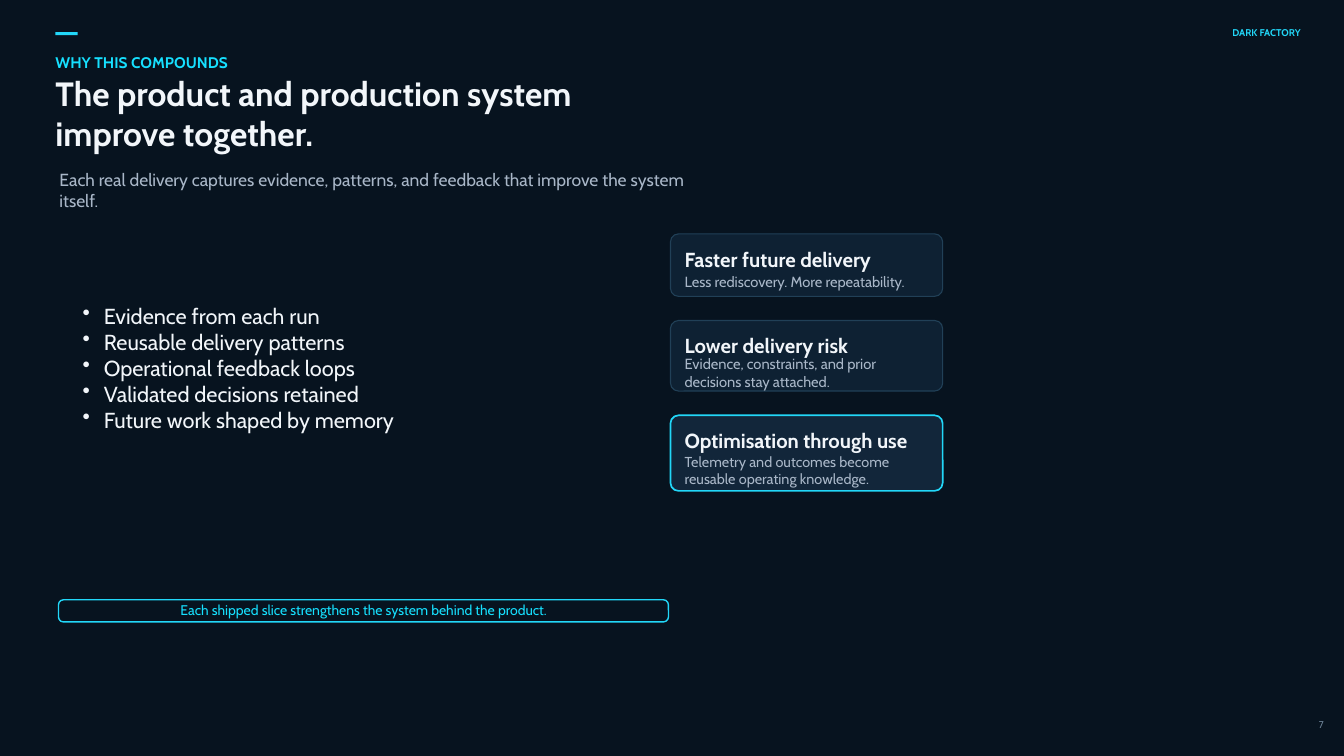
"""Builds the slide on how the product and its production system improve together."""
from lxml.etree import SubElement
from pptx import Presentation
from pptx.dml.color import RGBColor
from pptx.enum.shapes import MSO_SHAPE
from pptx.enum.text import MSO_ANCHOR, MSO_AUTO_SIZE, PP_ALIGN
from pptx.oxml.ns import qn
from pptx.util import Inches, Pt

BACKGROUND = "07131F"
ACCENT = "22D7F8"
BRIGHT = "16E0FF"
WHITE = "F2F6FA"
MUTED = "A9B7C8"
CARD = "0E2133"
CARD_EDGE = "214057"

color = RGBColor.from_string

deck = Presentation()
deck.slide_width = Inches(13.33)
deck.slide_height = Inches(7.5)
page = deck.slides.add_slide(deck.slide_layouts[6])
page.background.fill.solid()
page.background.fill.fore_color.rgb = color(BACKGROUND)


def add_text(text, left, top, width, height, size, ink, bold=False, align=PP_ALIGN.LEFT):
    box = page.shapes.add_textbox(Inches(left), Inches(top), Inches(width), Inches(height))
    frame = box.text_frame
    frame.text = text
    frame.word_wrap = True
    frame.auto_size = MSO_AUTO_SIZE.SHAPE_TO_FIT_TEXT
    frame.vertical_anchor = MSO_ANCHOR.MIDDLE
    frame.margin_left = frame.margin_right = frame.margin_top = frame.margin_bottom = 0
    for para in frame.paragraphs:
        para.alignment = align
        for span in para.runs:
            span.font.name = "Cabin"
            span.font.size = Pt(size)
            span.font.bold = bold
            span.font.color.rgb = color(ink)
    return frame


def add_panel(left, top, width, height, fill, edge=None, edge_width=0, radius=0):
    kind = MSO_SHAPE.ROUNDED_RECTANGLE if radius else MSO_SHAPE.RECTANGLE
    panel = page.shapes.add_shape(kind, Inches(left), Inches(top), Inches(width), Inches(height))
    panel.shadow.inherit = False
    panel.fill.solid()
    panel.fill.fore_color.rgb = color(fill)
    if radius:
        panel.adjustments[0] = radius / height
    if edge:
        panel.line.color.rgb = color(edge)
        panel.line.width = Pt(edge_width)
    else:
        panel.line.fill.background()


add_panel(0.55, 0.32, 0.22, 0.03, ACCENT)
add_text("DARK FACTORY", 12.1, 0.25, 0.8, 0.14, 7, ACCENT, True, PP_ALIGN.RIGHT)
add_text("7", 12.95, 7.12, 0.18, 0.14, 7, "6F859A", align=PP_ALIGN.RIGHT)
add_text("WHY THIS COMPOUNDS", 0.55, 0.55, 2.1, 0.14, 11, BRIGHT, True)
add_text("The product and production system improve together.",
         0.55, 0.69, 5.6, 0.86, 24, WHITE, True)
add_text("Each real delivery captures evidence, patterns, and feedback "
         "that improve the system itself.", 0.59, 1.71, 6.2, 0.36, 12.5, MUTED)

gains = [
    "Evidence from each run",
    "Reusable delivery patterns",
    "Operational feedback loops",
    "Validated decisions retained",
    "Future work shaped by memory",
]
gain_list = add_text("\n".join(gains), 0.82, 3.09, 3.6, 1.11, 15.5, WHITE)
for para in gain_list.paragraphs:
    properties = para._p.get_or_add_pPr()
    properties.set("marL", str(Inches(0.21)))
    properties.set("indent", str(Inches(-0.21)))
    SubElement(properties, qn("a:buChar")).set("char", "•")

cards = [
    ("Faster future delivery", "Less rediscovery. More repeatability.",
     2.32, 0.62, 2.63, 10.5, CARD, CARD_EDGE, 0.8),
    ("Lower delivery risk", "Evidence, constraints, and prior decisions stay attached.",
     3.18, 0.7, 3.53, 10.5, CARD, CARD_EDGE, 0.8),
    ("Optimisation through use", "Telemetry and outcomes become reusable operating knowledge.",
     4.12, 0.75, 4.5, 10.3, "12263A", ACCENT, 1.2),
]
for heading, detail, top, height, detail_top, detail_size, fill, edge, edge_width in cards:
    add_panel(6.65, top, 2.7, height, fill, edge, edge_width, 0.08)
    add_text(heading, 6.79, top + 0.14, 2.42, 0.22, 14.5, WHITE, True)
    add_text(detail, 6.79, detail_top, 2.42, 0.33, detail_size, MUTED)

add_panel(0.58, 5.95, 6.05, 0.22, BACKGROUND, ACCENT, 1, 0.05)
add_text("Each shipped slice strengthens the system behind the product.",
         0.7, 5.98, 5.81, 0.14, 10, BRIGHT, align=PP_ALIGN.CENTER)

deck.save("out.pptx")
